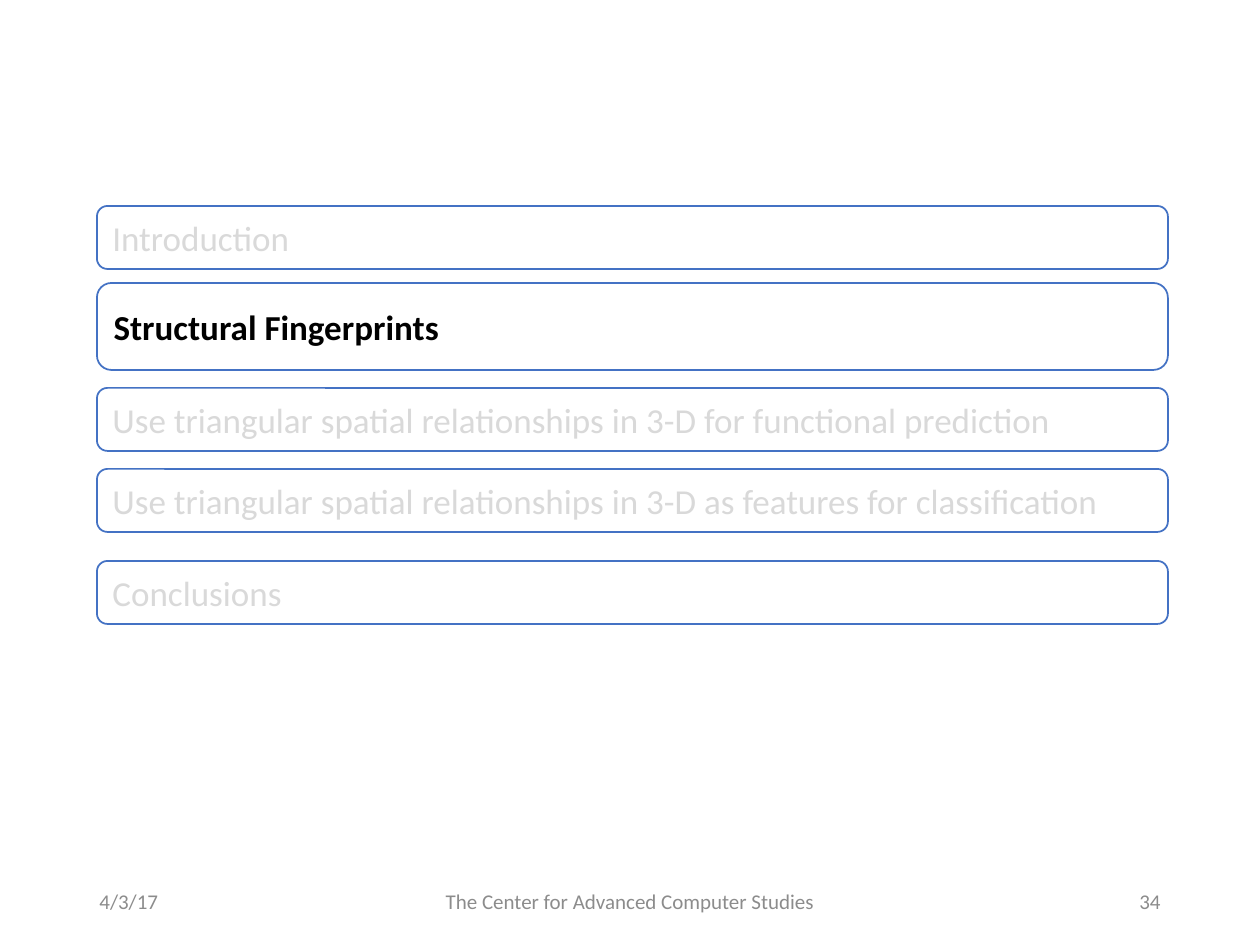
import pptx
import pptx.util
import pptx.dml.color
import pptx.enum.shapes
import pptx.enum.text

PX = 914400 // 126  # EMU per pixel
ALIGN = pptx.enum.text.PP_ALIGN


def color(value):
    return pptx.dml.color.RGBColor.from_string(value)


def write(shape, text, size, text_color, alignment=ALIGN.LEFT, bold=False):
    frame = shape.text_frame
    frame.word_wrap = True
    frame.vertical_anchor = pptx.enum.text.MSO_ANCHOR.MIDDLE
    paragraph = frame.paragraphs[0]
    paragraph.alignment = alignment
    run = paragraph.add_run()
    run.text = text
    run.font.name = "Calibri"
    run.font.size = pptx.util.Pt(size)
    run.font.bold = bold
    run.font.color.rgb = color(text_color)


presentation = pptx.Presentation()
presentation.slide_width = pptx.util.Inches(10)
presentation.slide_height = pptx.util.Inches(7.5)
slide = presentation.slides.add_slide(presentation.slide_layouts[6])

# Agenda: the current topic is taller, bold and black
agenda = [
    (206, "Introduction", False),
    (283, "Structural Fingerprints", True),
    (388, "Use triangular spatial relationships in 3-D for functional prediction", False),
    (469, "Use triangular spatial relationships in 3-D as features for classification", False),
    (561, "Conclusions", False),
]
for top, topic, current in agenda:
    height = 87 if current else 63
    shape = slide.shapes.add_shape(
        pptx.enum.shapes.MSO_SHAPE.ROUNDED_RECTANGLE,
        97 * PX, top * PX, 1071 * PX, height * PX)
    shape.shadow.inherit = False
    shape.fill.solid()
    shape.fill.fore_color.rgb = color("FFFFFF")
    shape.line.color.rgb = color("4472C4")
    shape.line.width = pptx.util.Pt(1)
    write(shape, topic, 20, "000000" if current else "D9D9D9", bold=current)

# Footer: centre, date and slide number
footer = [
    (417, 426, "The Center for Advanced Computer Studies", ALIGN.CENTER),
    (87, 283, "4/3/17", ALIGN.LEFT),
    (890, 283, "34", ALIGN.RIGHT),
]
for left, width, text, alignment in footer:
    box = slide.shapes.add_textbox(left * PX, 876 * PX, width * PX, 50 * PX)
    write(box, text, 12, "8C8C8C", alignment)

presentation.save("out.pptx")
